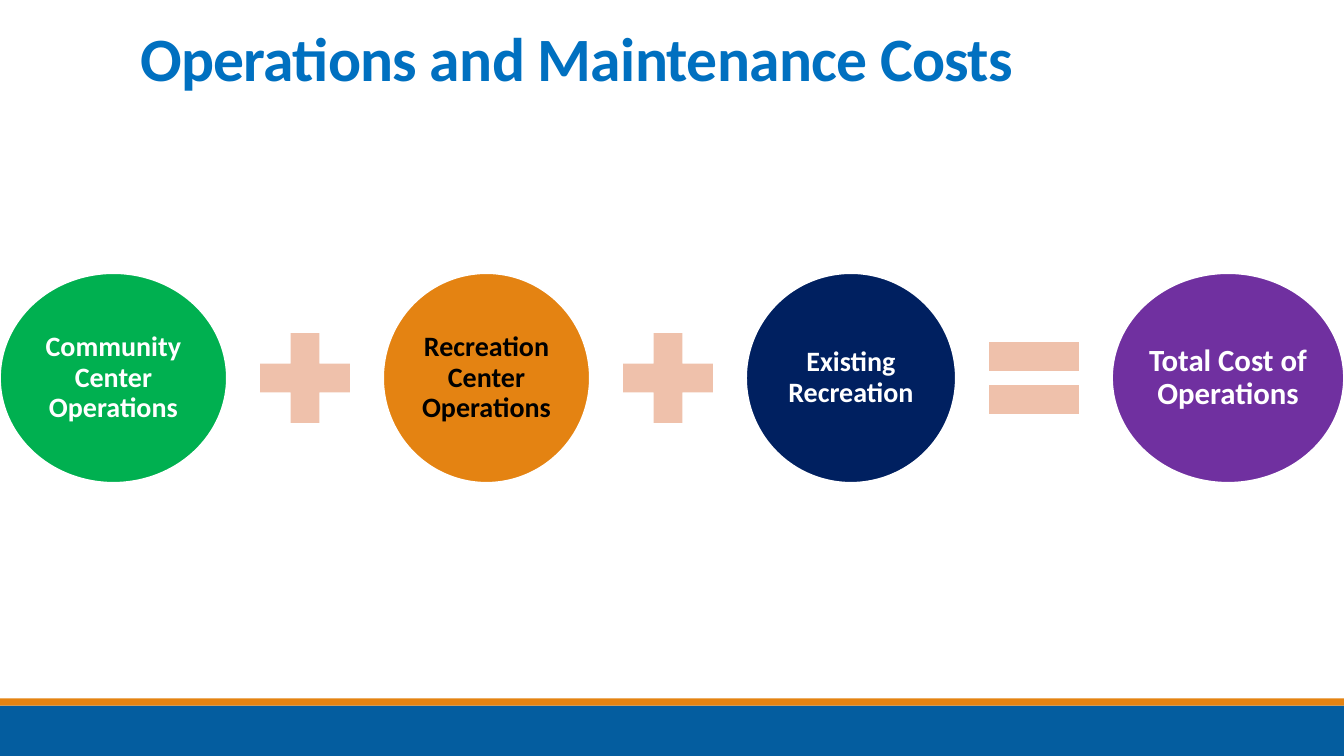
from dataclasses import dataclass

import pptx
import pptx.dml.color
import pptx.enum.shapes
import pptx.enum.text
import pptx.util
from pptx.dml.color import RGBColor
from pptx.enum.shapes import MSO_SHAPE
from pptx.util import Inches, Pt

WHITE = RGBColor(0xFF, 0xFF, 0xFF)
BLACK = RGBColor(0x00, 0x00, 0x00)
TITLE_BLUE = RGBColor(0x00, 0x70, 0xC0)
FOOTER_BLUE = RGBColor(0x04, 0x5D, 0x9F)
ORANGE = RGBColor(0xE4, 0x83, 0x12)
GREEN = RGBColor(0x00, 0xB0, 0x50)
NAVY = RGBColor(0x00, 0x20, 0x60)
PURPLE = RGBColor(0x70, 0x30, 0xA0)
PEACH = RGBColor(0xEF, 0xC1, 0xAB)

FONT = "Calibri"
SLIDE_WIDTH, SLIDE_HEIGHT = 13.33, 7.5
EQUATION_MIDDLE = 3.75
TERM_HEIGHT = 2.08
SIGN_SIZE = 1.21
GAP = 0.17


@dataclass
class Term:
    label: str
    width: float
    fill: RGBColor
    color: RGBColor = WHITE
    size: int = 20


@dataclass
class Sign:
    kind: MSO_SHAPE
    width: float = SIGN_SIZE


EQUATION = [
    Term("Community Center Operations", 2.25, GREEN),
    Sign(MSO_SHAPE.MATH_PLUS),
    Term("Recreation Center Operations", 2.05, ORANGE, BLACK),
    Sign(MSO_SHAPE.MATH_PLUS),
    Term("Existing Recreation", 2.08, NAVY),
    Sign(MSO_SHAPE.MATH_EQUAL),
    Term("Total Cost of Operations", 2.3, PURPLE, size=22),
]


def add_filled(shapes, kind: MSO_SHAPE, left: float, top: float,
               width: float, height: float, fill: RGBColor):
    """Add a preset shape with a solid fill, no line and no shadow."""
    shape = shapes.add_shape(kind, Inches(left), Inches(top),
                             Inches(width), Inches(height))
    shape.shadow.inherit = False
    shape.fill.solid()
    shape.fill.fore_color.rgb = fill
    shape.line.fill.background()
    return shape


def format_title(title) -> None:
    title.left, title.top = Inches(1.29), Inches(0)
    title.width, title.height = Inches(11), Inches(0.98)
    frame = title.text_frame
    frame.auto_size = pptx.enum.text.MSO_AUTO_SIZE.NONE
    frame.vertical_anchor = pptx.enum.text.MSO_ANCHOR.BOTTOM
    para = frame.paragraphs[0]
    span = para.add_run()
    span.text = "Operations and Maintenance Costs"
    span.font._element.set("spc", "-50")
    para.alignment = pptx.enum.text.PP_ALIGN.LEFT
    para.line_spacing = 0.85
    para.font.name, para.font.size, para.font.bold = FONT, Pt(44), True
    para.font.color.rgb = TITLE_BLUE


def add_term(shapes, term: Term, left: float) -> None:
    oval = add_filled(shapes, MSO_SHAPE.OVAL, left,
                      EQUATION_MIDDLE - TERM_HEIGHT / 2,
                      term.width, TERM_HEIGHT, term.fill)
    oval.line.color.rgb = WHITE
    oval.line.width = Pt(1.25)
    frame = oval.text_frame
    frame.word_wrap = True
    frame.vertical_anchor = pptx.enum.text.MSO_ANCHOR.MIDDLE
    frame.margin_left = frame.margin_right = Inches(0.03)
    frame.margin_top = frame.margin_bottom = Inches(0.03)
    para = frame.paragraphs[0]
    para.text = term.label
    para.alignment = pptx.enum.text.PP_ALIGN.CENTER
    para.line_spacing = 0.9
    para.font.name, para.font.size, para.font.bold = FONT, Pt(term.size), True
    para.font.color.rgb = term.color


def add_equation(shapes) -> None:
    """Lay terms and signs out from left to right with equal gaps."""
    left = 0.0
    for item in EQUATION:
        if isinstance(item, Term):
            add_term(shapes, item, left)
        else:
            add_filled(shapes, item.kind, left, EQUATION_MIDDLE - SIGN_SIZE / 2,
                       SIGN_SIZE, SIGN_SIZE, PEACH)
        left += item.width + GAP


def main() -> None:
    deck = pptx.Presentation()
    deck.slide_width = Inches(SLIDE_WIDTH)
    deck.slide_height = Inches(SLIDE_HEIGHT)
    page = deck.slides.add_slide(deck.slide_layouts.get_by_name("Title Only"))
    add_filled(page.shapes, MSO_SHAPE.RECTANGLE, 0, 7, SLIDE_WIDTH, 0.5, FOOTER_BLUE)
    add_filled(page.shapes, MSO_SHAPE.RECTANGLE, 0, 6.93, SLIDE_WIDTH, 0.07, ORANGE)
    format_title(page.shapes.title)
    add_equation(page.shapes.add_group_shape().shapes)
    deck.save("out.pptx")


if __name__ == "__main__":
    main()
